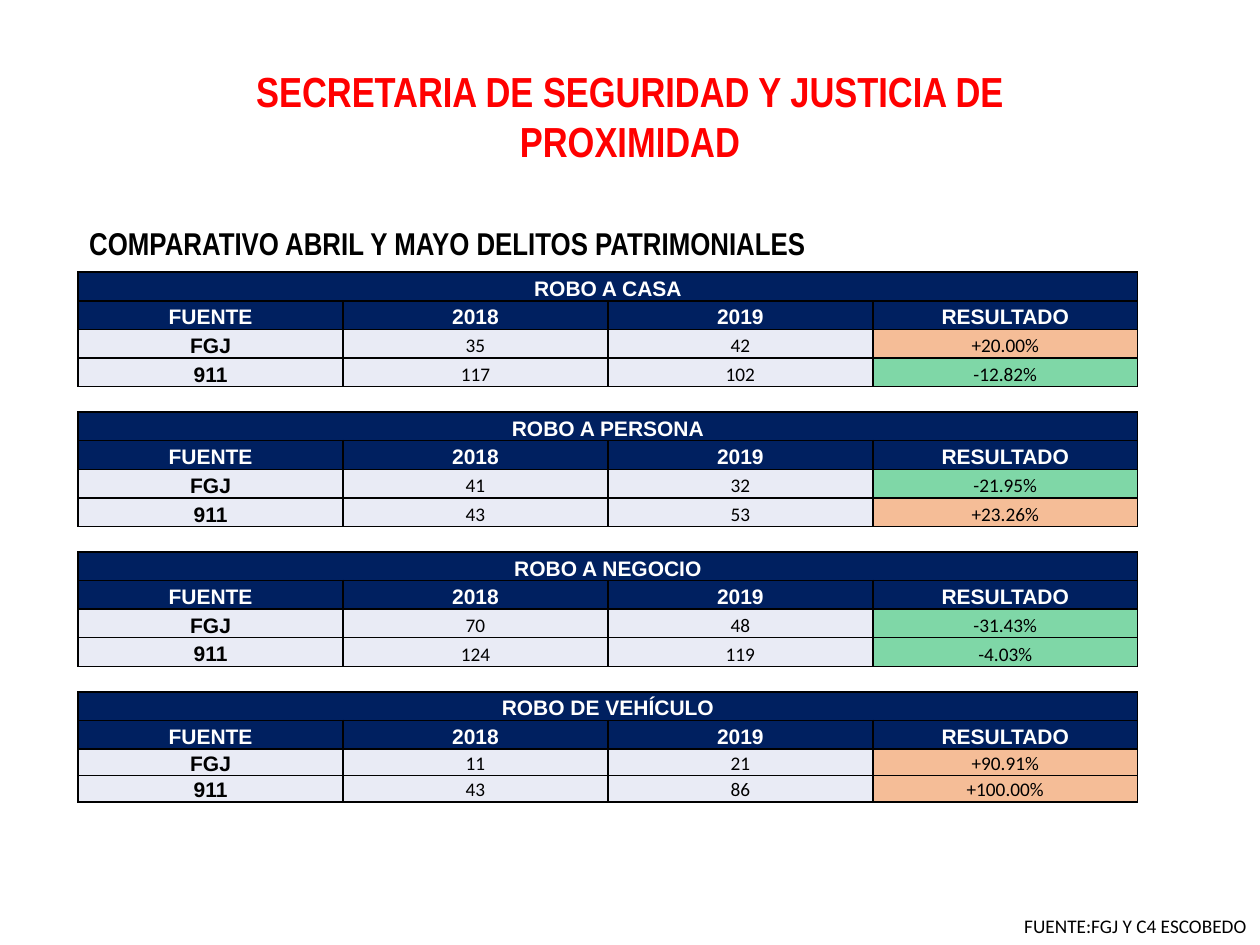
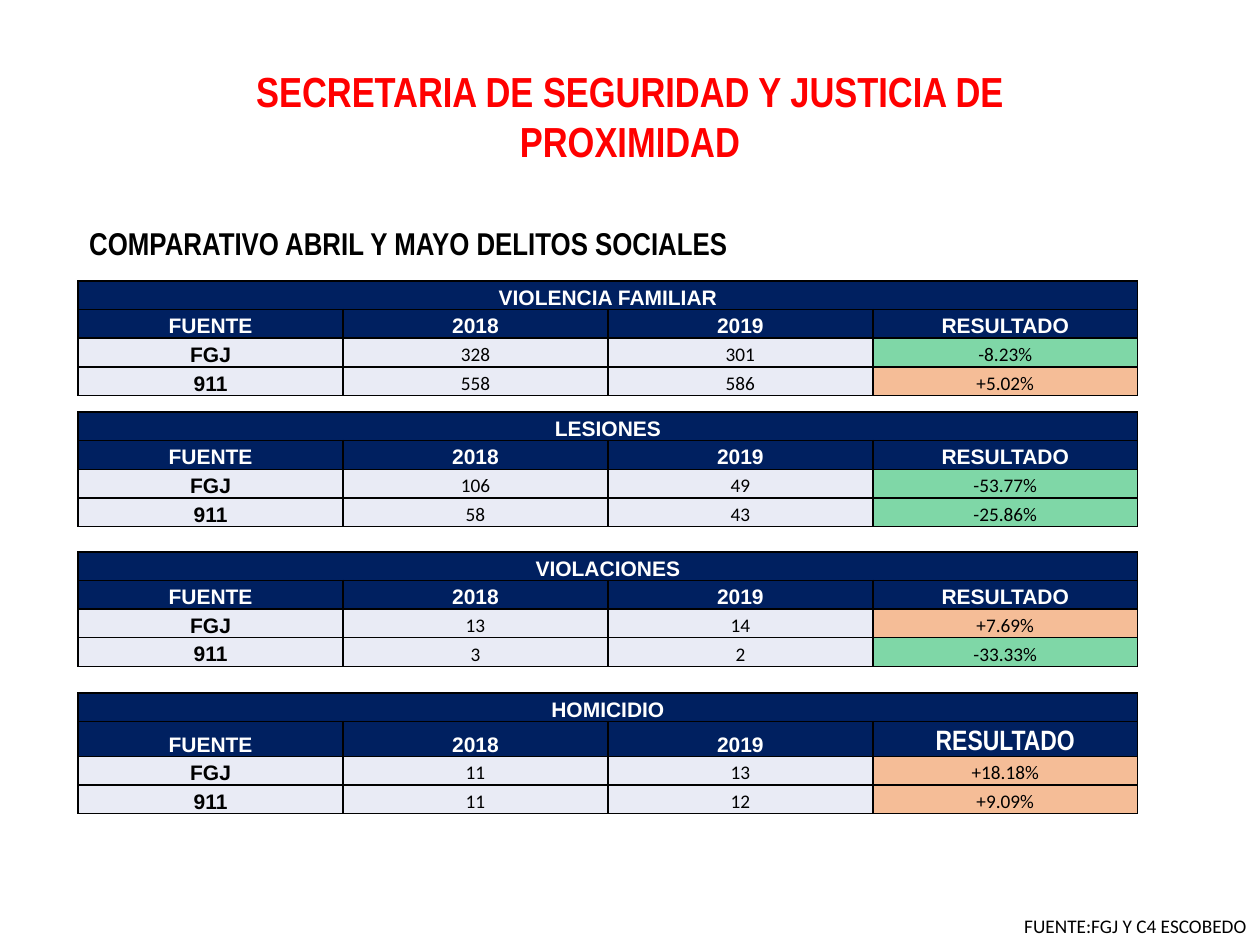
from lxml import etree
from pptx import Presentation
from pptx.dml.color import RGBColor
from pptx.enum.text import MSO_ANCHOR, MSO_AUTO_SIZE, PP_ALIGN
from pptx.oxml.ns import qn
from pptx.util import Inches, Pt

CENTER, LEFT = PP_ALIGN.CENTER, PP_ALIGN.LEFT
TOP, BOTTOM = MSO_ANCHOR.TOP, MSO_ANCHOR.BOTTOM
NO_AUTOFIT = MSO_AUTO_SIZE.NONE
TITLE_ONLY = 5

TITLE = "SECRETARIA DE SEGURIDAD Y JUSTICIA DE PROXIMIDAD"
SOURCE = "FUENTE:FGJ Y C4 ESCOBEDO"
HEADERS = ("FUENTE", "2018", "2019", "RESULTADO")

# Each crime: name, FGJ row, 911 row, then any departures from the usual layout
SLIDES = [
    ("COMPARATIVO ABRIL Y MAYO DELITOS PATRIMONIALES", [
        ("ROBO A CASA", ("35", "42", "+20.00%"), ("117", "102", "-12.82%"), {}),
        ("ROBO A PERSONA", ("41", "32", "-21.95%"), ("43", "53", "+23.26%"), {}),
        ("ROBO A NEGOCIO", ("70", "48", "-31.43%"), ("124", "119", "-4.03%"), {}),
        ("ROBO DE VEHÍCULO", ("11", "21", "+90.91%"), ("43", "86", "+100.00%"),
         {"data_height": 0.21}),
    ]),
    ("COMPARATIVO ABRIL Y MAYO DELITOS SOCIALES", [
        ("VIOLENCIA FAMILIAR", ("328", "301", "-8.23%"), ("558", "586", "+5.02%"),
         {"shift": 0.07}),
        ("LESIONES", ("106", "49", "-53.77%"), ("58", "43", "-25.86%"), {}),
        ("VIOLACIONES", ("13", "14", "+7.69%"), ("3", "2", "-33.33%"), {}),
        ("HOMICIDIO", ("11", "13", "+18.18%"), ("11", "12", "+9.09%"),
         {"shift": 0.01, "header_height": 0.27, "result_font": ("Arial Narrow", 16)}),
    ]),
]

BLACK, WHITE, RED = "000000", "FFFFFF", "FF0000"
NAVY, PALE, ORANGE, GREEN = "002060", "E9EBF5", "ED7D31", "00B050"
TABLE_LEFT, TABLE_TOP, TABLE_STEP = 0.62, 2.16, 1.11
TABLE_WIDTH, TABLE_HEIGHT = 8.41, 0.91
ROW_HEIGHT = TABLE_HEIGHT / 4


def rgb(color):
    return RGBColor.from_string(color)


def write(tf, text, font, size, color, bold=False, align=LEFT):
    p = tf.paragraphs[0]
    p.alignment = align
    r = p.add_run()
    r.text = text
    r.font.name, r.font.size, r.font.bold = font, Pt(size), bold
    r.font.color.rgb = rgb(color)


def add_text(s, box, text, font, size, bold=False, wrap=True):
    tf = s.shapes.add_textbox(*map(Inches, box)).text_frame
    tf.word_wrap = wrap
    write(tf, text, font, size, BLACK, bold)


def add_title(s):
    sp = s.shapes.title
    sp.left, sp.top, sp.width, sp.height = map(Inches, (1.9, 0.47, 6.2, 0.91))
    tf = sp.text_frame
    tf.auto_size, tf.vertical_anchor = NO_AUTOFIT, TOP
    write(tf, TITLE, "Arial Narrow", 24, RED, True, CENTER)


def format_cell(cell, fill, alpha=None):
    """Set insets, thin black borders and a fill; alpha is the opacity in percent."""
    cell.margin_left = cell.margin_right = cell.margin_top = Inches(0.01)
    cell.margin_bottom = 0
    cell.vertical_anchor = BOTTOM
    tc_pr = cell._tc.get_or_add_tcPr()
    for side in ("a:lnL", "a:lnR", "a:lnT", "a:lnB"):
        ln = etree.SubElement(tc_pr, qn(side), w=str(Pt(1)))
        solid = etree.SubElement(ln, qn("a:solidFill"))
        etree.SubElement(solid, qn("a:srgbClr"), val=BLACK)
    cell.fill.solid()
    cell.fill.fore_color.rgb = rgb(fill)
    if alpha:
        color = tc_pr.find(qn("a:solidFill")).find(qn("a:srgbClr"))
        etree.SubElement(color, qn("a:alpha"), val=str(alpha * 1000))


def add_crime_table(s, index, name, fgj, calls, options):
    top = TABLE_TOP + index * TABLE_STEP + options.get("shift", 0)
    frame = s.shapes.add_table(4, 4, *map(Inches, (TABLE_LEFT, top, TABLE_WIDTH, TABLE_HEIGHT)))
    table = frame.table
    table.first_row = table.horz_banding = False
    data_height = options.get("data_height", ROW_HEIGHT)
    heights = (ROW_HEIGHT, options.get("header_height", ROW_HEIGHT), data_height, data_height)
    for row, height in zip(table.rows, heights):
        row.height = Inches(height)

    for col in range(4):
        format_cell(table.cell(0, col), NAVY)
    table.cell(0, 0).merge(table.cell(0, 3))
    write(table.cell(0, 0).text_frame, name, "Arial", 12, WHITE, True, CENTER)

    for col, header in enumerate(HEADERS):
        cell = table.cell(1, col)
        format_cell(cell, NAVY)
        font = options.get("result_font", ("Arial", 12)) if col == 3 else ("Arial", 12)
        write(cell.text_frame, header, *font, WHITE, True, CENTER)

    for row, values in enumerate((("FGJ", *fgj), ("911", *calls)), 2):
        for col, value in enumerate(values):
            cell = table.cell(row, col)
            if col == 3:
                format_cell(cell, ORANGE if value.startswith("+") else GREEN, 50)
            else:
                format_cell(cell, PALE)
            font = ("Arial", 12) if col == 0 else ("Calibri", 11)
            write(cell.text_frame, value, *font, BLACK, col == 0, CENTER)


def main():
    prs = Presentation()
    prs.slide_width, prs.slide_height = Inches(10), Inches(7.5)
    for subtitle, crimes in SLIDES:
        s = prs.slides.add_slide(prs.slide_layouts[TITLE_ONLY])
        add_title(s)
        add_text(s, (0.61, 1.73, 7.38, 0.4), subtitle, "Arial Narrow", 18, bold=True)
        for index, crime in enumerate(crimes):
            add_crime_table(s, index, *crime)
        add_text(s, (8.03, 7.21, 1.98, 0.29), SOURCE, "Calibri", 11, wrap=False)
    prs.save("out.pptx")


if __name__ == "__main__":
    main()
